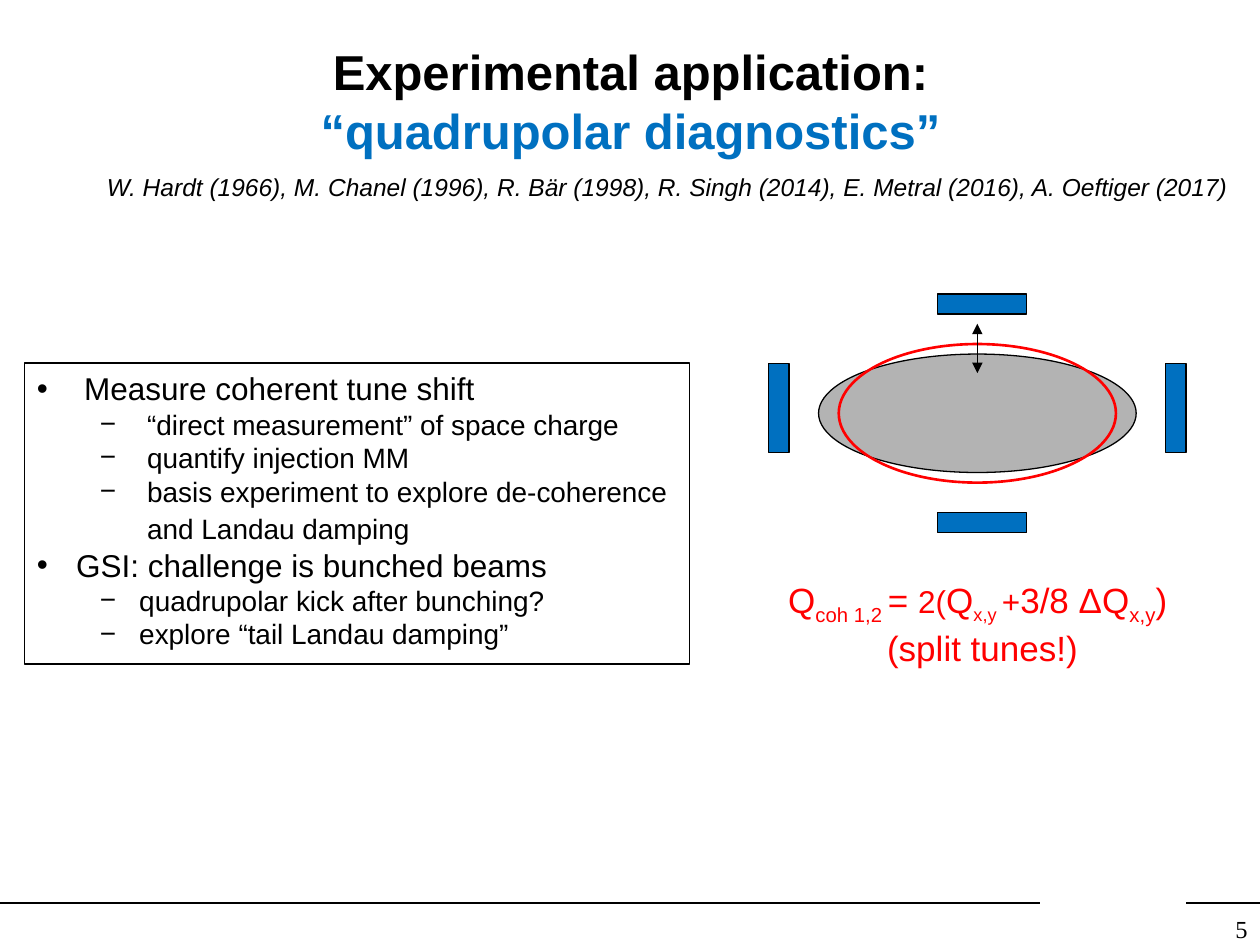
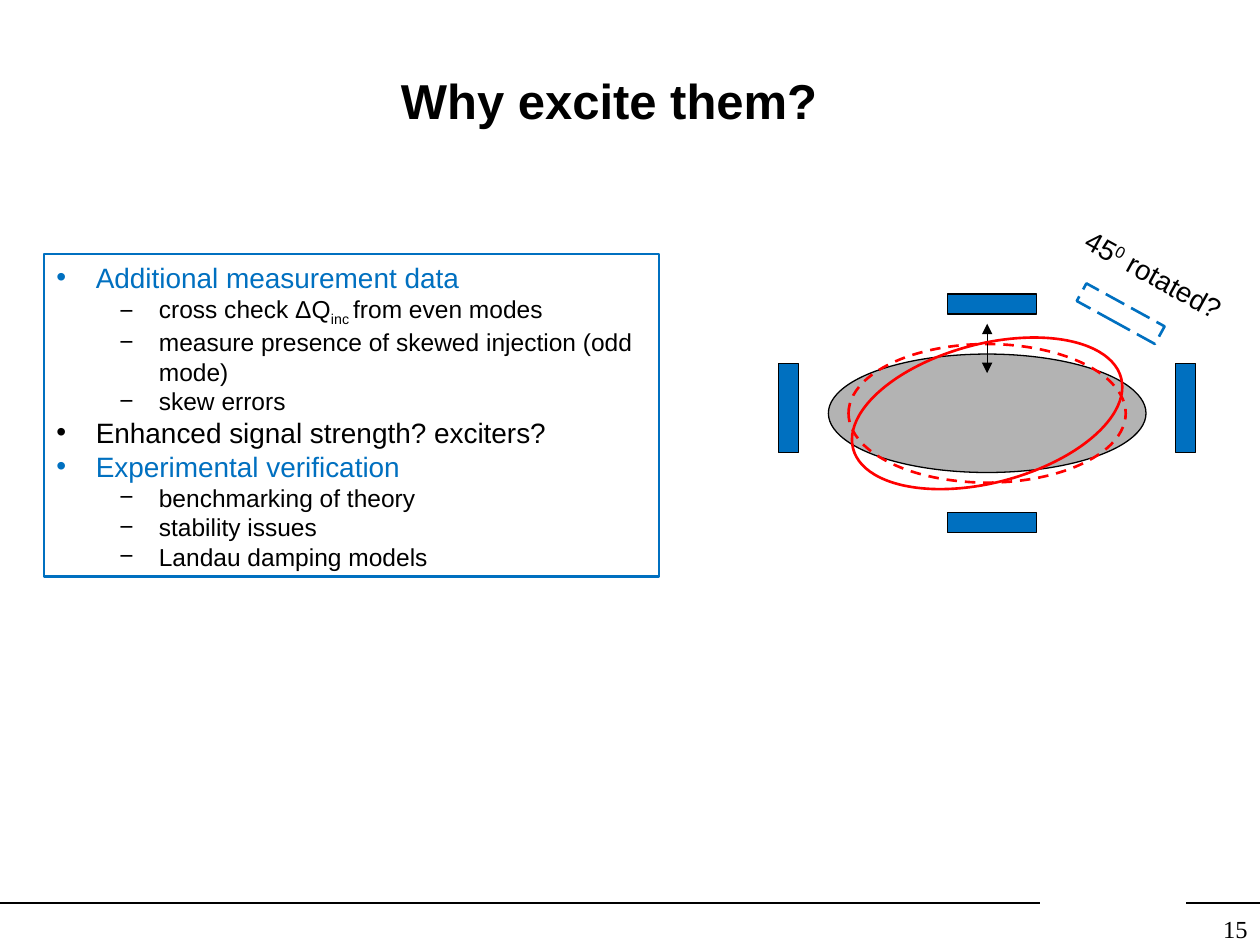
from lxml.etree import SubElement
from pptx import Presentation
from pptx.dml.color import RGBColor
from pptx.enum.dml import MSO_LINE_DASH_STYLE as Dash
from pptx.enum.shapes import MSO_CONNECTOR as Connector, MSO_SHAPE as Shape
from pptx.enum.text import MSO_ANCHOR as Anchor, PP_ALIGN as Align
from pptx.oxml.ns import qn
from pptx.util import Pt

COLORS = {"ink": "000000", "blue": "0070C0", "red": "FF0000",
          "gray": "B3B3B3", "paper": "FFFFFF"}
SANS, SERIF = "Arial", "Times New Roman"
SUBSCRIPT, SUPERSCRIPT = -25000, 30000
BEAM_Y = 236.2
PLATE = (51, 11.5)
RING = (158.4, 79.2)


def rgb(name):
    return RGBColor.from_string(COLORS[name])


# Text
def write(para, spans, size, color="ink", font=SANS, bold=False, italic=False):
    """Each span is a string or (text, overrides)."""
    spans = [(span, {}) if isinstance(span, str) else span for span in spans]
    for text, look in spans:
        run = para.add_run()
        run.text = text
        run.font.name = font
        run.font.size = Pt(look.get("size", size))
        run.font.bold, run.font.italic = bold, italic
        run.font.color.rgb = rgb(look.get("color", color))
        if "base" in look:
            run._r.get_or_add_rPr().set("baseline", str(look["base"]))


def sub(text, **look):
    return text, {"base": SUBSCRIPT, **look}


def add_text(page, left, top, width, height, lines, size, align=Align.LEFT,
             wrap=False, anchor=Anchor.TOP, rotation=0, **look):
    box = page.shapes.add_textbox(Pt(left), Pt(top), Pt(width), Pt(height))
    box.rotation = rotation
    frame = box.text_frame
    frame.word_wrap, frame.vertical_anchor = wrap, anchor
    for index, spans in enumerate(lines):
        para = frame.add_paragraph() if index else frame.paragraphs[0]
        para.alignment = align
        write(para, spans, size, **look)
    return box


def add_title(page, left, width, text, accent=None):
    box = add_text(page, left, 12.2, width, 90, [[text]], 28, Align.CENTER,
                   wrap=True, anchor=Anchor.MIDDLE, bold=True)
    if accent:
        para = box.text_frame.paragraphs[0]
        para.add_line_break()
        write(para, [accent], 28, "blue", bold=True)


# Lines and shapes
def add_line(page, x1, y1, x2, y2, arrows=False):
    line = page.shapes.add_connector(Connector.STRAIGHT, Pt(x1), Pt(y1), Pt(x2), Pt(y2))
    line.line.color.rgb = rgb("ink")
    line.line.width = Pt(0.75)
    if arrows:
        for end in ("a:headEnd", "a:tailEnd"):
            SubElement(line.line._get_or_add_ln(), qn(end), type="triangle")
    SubElement(line._element.spPr, qn("a:effectLst"))


def add_outlined(page, kind, left, top, width, height, fill=None, line="ink",
                 weight=0.75, dash=None, rotation=0):
    shape = page.shapes.add_shape(kind, Pt(left), Pt(top), Pt(width), Pt(height))
    shape.shadow.inherit = False
    shape.rotation = rotation
    if fill:
        shape.fill.solid()
        shape.fill.fore_color.rgb = rgb(fill)
    else:
        shape.fill.background()
    shape.line.color.rgb = rgb(line)
    shape.line.width = Pt(weight)
    if dash:
        shape.line.dash_style = dash
    return shape


def add_centered(page, kind, x, y, size, **look):
    width, height = size
    add_outlined(page, kind, x - width / 2, y - height / 2, width, height, **look)


def add_ring(page, x, **look):
    add_centered(page, Shape.OVAL, x, BEAM_Y, RING, line="red", weight=1.5, **look)


def add_pickup(page, x, ring_dash=None):
    """Beam cross-section between four pick-up plates."""
    add_centered(page, Shape.OVAL, x, BEAM_Y, (181.5, 67.7), fill="gray")
    plates = [(2.8, -62.5, 0), (2.8, 62.5, 0), (-113.4, -3, 270), (113.4, -3, 90)]
    for dx, dy, rotation in plates:
        add_centered(page, Shape.RECTANGLE, x + dx, BEAM_Y + dy, PLATE,
                     fill="blue", rotation=rotation)
    add_ring(page, x, dash=ring_dash)
    add_line(page, x, 185, x, 213.2, arrows=True)


# Bulleted box: each item is (level, hanging indent, spans, color)
def add_bullet_box(page, left, top, width, height, items, sizes, line, weight):
    box = add_outlined(page, Shape.RECTANGLE, left, top, width, height,
                       line=line, weight=weight)
    frame = box.text_frame
    frame.word_wrap, frame.vertical_anchor = True, Anchor.TOP
    for index, (level, hang, spans, color) in enumerate(items):
        para = frame.add_paragraph() if index else frame.paragraphs[0]
        para.alignment, para.level = Align.LEFT, level
        props = para._p.get_or_add_pPr()
        props.set("marL", str(Pt(hang + 36 * level)))
        props.set("indent", str(-Pt(hang)))
        SubElement(props, qn("a:buFont"), typeface=SANS)
        SubElement(props, qn("a:buChar"), char="•−"[level])
        write(para, spans, sizes[level], color)


def add_page(deck, number):
    page = deck.slides.add_slide(deck.slide_layouts[6])
    add_line(page, 0, 516, 594, 516)
    add_line(page, 678, 516, 720, 516)
    add_text(page, 647, 518.5, 73, 21.6, [[number]], 14, Align.RIGHT,
             wrap=True, font=SERIF)
    return page


def build_diagnostics(deck):
    page = add_page(deck, "5")
    add_title(page, 20, 680.5, "Experimental application:", "“quadrupolar diagnostics”")
    wide, narrow = 27, 22.5
    items = [
        (0, wide, ["Measure coherent tune shift"], "ink"),
        (1, wide, ["“direct measurement” of space charge"], "ink"),
        (1, wide, ["quantify injection MM"], "ink"),
        (1, wide, ["basis experiment to explore de-coherence and Landau damping",
                   (" ", {"size": 18})], "ink"),
        (0, narrow, ["GSI: challenge is bunched beams"], "ink"),
        (1, narrow, ["quadrupolar kick after bunching?"], "ink"),
        (1, narrow, ["explore “tail Landau damping”"], "ink"),
    ]
    add_bullet_box(page, 14, 207.5, 380, 172, items, (18, 16), "ink", 0.75)
    add_pickup(page, 558.5)
    formula = ["Q", sub("coh 1,2 "), "= ", ("2(", {"size": 18}), "Q",
               sub("x,y ", size=18), ("+", {"size": 18}), "3/8 ΔQ", sub("x,y"), ") "]
    add_text(page, 437, 327, 249, 55.5, [formula, ["(split tunes!)"]], 20,
             Align.CENTER, color="red")
    authors = ("W. Hardt (1966), M. Chanel (1996), R. Bär (1998), R. Singh (2014), "
               "E. Metral (2016), A. Oeftiger (2017)")
    add_text(page, 54, 94.5, 657, 24.5, [[authors]], 14, italic=True)


def build_excitation(deck):
    page = add_page(deck, "15")
    add_title(page, 42, 612, "Why excite them?")
    add_pickup(page, 564.1, ring_dash=Dash.DASH)
    add_ring(page, 564.1, rotation=345.2)
    add_centered(page, Shape.RECTANGLE, 640.4, 179.3, PLATE, fill="paper",
                 line="blue", weight=1.5, dash=Dash.LONG_DASH, rotation=28.8)
    add_text(page, 609, 144, 102, 26.6,
             [["45", ("0", {"base": SUPERSCRIPT}), " rotated?"]], 16, rotation=29)
    hang = 22.5
    items = [
        (0, hang, ["Additional measurement data"], "blue"),
        (1, hang, ["cross check ΔQ", sub("inc "), "from even modes"], "ink"),
        (1, hang, ["measure presence of skewed injection (odd mode)"], "ink"),
        (1, hang, ["skew errors"], "ink"),
        (0, hang, ["Enhanced signal strength? exciters?"], "ink"),
        (0, hang, ["Experimental verification"], "blue"),
        (1, hang, ["benchmarking of theory"], "ink"),
        (1, hang, ["stability issues"], "ink"),
        (1, hang, ["Landau damping models"], "ink"),
    ]
    add_bullet_box(page, 25.2, 145.2, 351.5, 184.3, items, (16, 14), "blue", 1.5)


def main():
    deck = Presentation()
    deck.slide_width, deck.slide_height = Pt(720), Pt(540)
    build_diagnostics(deck)
    build_excitation(deck)
    deck.save("out.pptx")


if __name__ == "__main__":
    main()
